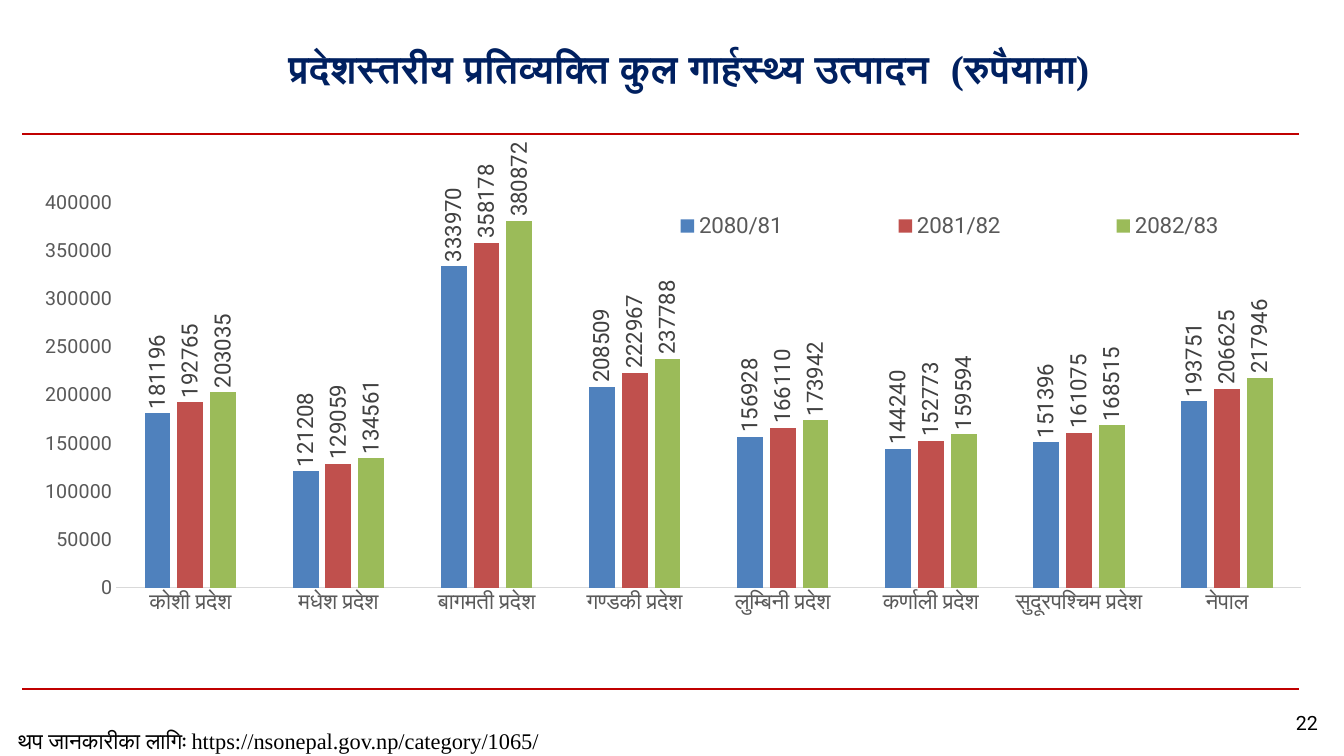
"""Build the slide on provincial per-capita gross domestic product."""
from dataclasses import dataclass

from pptx import Presentation
from pptx.chart.data import CategoryChartData
from pptx.dml.color import RGBColor
from pptx.enum.chart import XL_CHART_TYPE, XL_LABEL_POSITION, XL_LEGEND_POSITION, XL_TICK_MARK
from pptx.enum.shapes import MSO_CONNECTOR
from pptx.enum.text import MSO_ANCHOR, PP_ALIGN
from pptx.oxml import parse_xml
from pptx.oxml.ns import nsdecls
from pptx.util import Inches, Pt

CLUSTERED = XL_CHART_TYPE.COLUMN_CLUSTERED
OUTSIDE_END = XL_LABEL_POSITION.OUTSIDE_END
LEGEND_BOTTOM = XL_LEGEND_POSITION.BOTTOM
NO_TICK = XL_TICK_MARK.NONE
STRAIGHT = MSO_CONNECTOR.STRAIGHT
MIDDLE, TOP = MSO_ANCHOR.MIDDLE, MSO_ANCHOR.TOP
CENTER, LEFT = PP_ALIGN.CENTER, PP_ALIGN.LEFT

CELL = Inches(1) / 12
COLUMNS, ROWS = 160, 90
UPRIGHT = "-5400000"
SERIF, SANS, BODY = "Times New Roman", "Roboto", "Calibri"
BLACK, GREY, DARK_GREY, NAVY, RED = "000000", "595959", "404040", "002060", "C00000"


@dataclass(frozen=True)
class Area:
    """A rectangle in grid columns and rows."""
    column: float
    row: float
    width: float
    height: float

    def lengths(self) -> list[int]:
        """Return left, top, width and height as slide lengths."""
        return [round(n * CELL) for n in (self.column, self.row, self.width, self.height)]


@dataclass(frozen=True)
class Caption:
    """A line of text with its place and look."""
    text: str
    area: Area
    font: str
    size: int
    color: str = BLACK
    bold: bool = False
    align: PP_ALIGN = LEFT
    anchor: MSO_ANCHOR = TOP


@dataclass(frozen=True)
class Year:
    """One fiscal year of values, in province order."""
    name: str
    color: str
    values: tuple[int, ...]


TITLE = Caption("प्रदेशस्तरीय प्रतिव्यक्ति कुल गार्हस्थ्य उत्पादन  (रुपैयामा)",
                Area(16, 3, 132, 9.25), SERIF, 28, NAVY, True, CENTER, MIDDLE)
CAPTIONS = (
    Caption("22", Area(152, 84, 7.2, 4), SANS, 14, align=CENTER),
    Caption("थप जानकारीका लागिः https://nsonepal.gov.np/category/1065/",
            Area(1, 86, 74, 4), SERIF, 16),
)
RULE_ROWS = (16, 82)
RULE_START, RULE_END = 2.65, 154.65
CHART_AREA = Area(3, 17, 155, 63)
PROVINCES = ("कोशी प्रदेश", "मधेश प्रदेश", "बागमती प्रदेश", "गण्डकी प्रदेश",
             "लुम्बिनी प्रदेश", "कर्णाली प्रदेश", "सुदूरपश्चिम प्रदेश", "नेपाल")
YEARS = (
    Year("2080/81", "4F81BD",
         (181196, 121208, 333970, 208509, 156928, 144240, 151396, 193751)),
    Year("2081/82", "C0504D",
         (192765, 129059, 358178, 222967, 166110, 152773, 161075, 206625)),
    Year("2082/83", "9BBB59",
         (203035, 134561, 380872, 237788, 173942, 159594, 168515, 217946)),
)


def rgb(value: str) -> RGBColor:
    """Turn a hex string into a colour."""
    return RGBColor.from_string(value)


def style_font(font, name: str, size: int, color: str, bold: bool = False) -> None:
    """Apply typeface, size, colour and weight."""
    font.name, font.size, font.bold = name, Pt(size), bold
    font.color.rgb = rgb(color)


def write_caption(box, caption: Caption) -> None:
    """Place a box and fill it with its formatted caption."""
    box.left, box.top, box.width, box.height = caption.area.lengths()
    frame = box.text_frame
    frame.text = caption.text
    frame.word_wrap = True
    frame.vertical_anchor = caption.anchor
    para = frame.paragraphs[0]
    para.alignment = caption.align
    for span in para.runs:
        style_font(span.font, caption.font, caption.size, caption.color, caption.bold)


def add_rule(page, row: float) -> None:
    """Draw a red line across the page at a row."""
    start, end, height = (round(n * CELL) for n in (RULE_START, RULE_END, row))
    rule = page.shapes.add_connector(STRAIGHT, start, height, end, height)
    rule.line.color.rgb = rgb(RED)
    rule.line.width = Pt(1.5)
    rule._element.spPr.append(parse_xml(f"<a:effectLst {nsdecls('a')}/>"))


def manual_layout(x: float, y: float, w: float, h: float, inner: bool = False):
    """Make a chart layout from shares of the chart's size."""
    target = '<c:layoutTarget val="inner"/>' if inner else ""
    modes = '<c:xMode val="edge"/><c:yMode val="edge"/>'
    shares = "".join(f'<c:{key} val="{share}"/>'
                     for key, share in zip("xywh", (x, y, w, h)))
    return parse_xml(f"<c:layout {nsdecls('c')}><c:manualLayout>{target}{modes}{shares}"
                     "</c:manualLayout></c:layout>")


def format_axes(chart) -> None:
    """Format both chart axes."""
    for axis, font, size in ((chart.category_axis, BODY, 16), (chart.value_axis, SANS, 14)):
        axis.major_tick_mark = axis.minor_tick_mark = NO_TICK
        axis.has_major_gridlines = False
        style_font(axis.tick_labels.font, font, size, GREY)
    chart.category_axis.format.line.color.rgb = rgb("D9D9D9")
    chart.category_axis.format.line.width = Pt(0.75)
    values = chart.value_axis
    values.format.line.fill.background()
    values.minimum_scale, values.maximum_scale, values.major_unit = 0, 430000, 50000
    values.tick_labels.number_format = "0"
    values.tick_labels.number_format_is_linked = False


def format_series(series, year: Year) -> None:
    """Colour a year's columns and stand its value labels upright."""
    series.format.fill.solid()
    series.format.fill.fore_color.rgb = rgb(year.color)
    labels = series.data_labels
    style_font(labels.font, SANS, 16, DARK_GREY)
    labels.show_value = True
    labels.number_format, labels.number_format_is_linked = "0", False
    labels.position = OUTSIDE_END
    for body in labels._element.xpath("./c:txPr/a:bodyPr"):
        body.set("rot", UPRIGHT)
        body.set("vert", "horz")


def add_output_chart(page) -> None:
    """Add the clustered columns of output per person."""
    data = CategoryChartData(number_format="0")
    data.categories = PROVINCES
    for year in YEARS:
        data.add_series(year.name, year.values)
    chart = page.shapes.add_chart(CLUSTERED, *CHART_AREA.lengths(), data).chart
    chart.has_title = False
    style_font(chart.font, BODY, 16, BLACK)
    format_axes(chart)
    plot = chart.plots[0]
    plot.gap_width, plot.overlap, plot.vary_by_categories = 219, -27, False
    for series, year in zip(plot.series, YEARS):
        format_series(series, year)
    chart.has_legend = True
    legend = chart.legend
    legend.position, legend.include_in_layout = LEGEND_BOTTOM, False
    style_font(legend.font, SANS, 16, GREY)
    plot_area = chart._chartSpace.chart.plotArea
    for element in (plot_area, legend._element):
        for layout in element.xpath("./c:layout"):
            element.remove(layout)
    plot_area.insert(0, manual_layout(0.07, 0.05, 0.91, 0.79, inner=True))
    legend._element.insert(1, manual_layout(0.42, 0.11, 0.58, 0.08))


def main() -> None:
    """Build and save the deck."""
    deck = Presentation()
    deck.slide_width, deck.slide_height = round(COLUMNS * CELL), round(ROWS * CELL)
    page = deck.slides.add_slide(deck.slide_layouts.get_by_name("Title Only"))
    for row in RULE_ROWS:
        add_rule(page, row)
    write_caption(page.shapes.title, TITLE)
    page.shapes.title.text_frame.paragraphs[0].line_spacing = 1.14
    for caption in CAPTIONS:
        write_caption(page.shapes.add_textbox(*caption.area.lengths()), caption)
    add_output_chart(page)
    deck.save("out.pptx")


if __name__ == "__main__":
    main()
